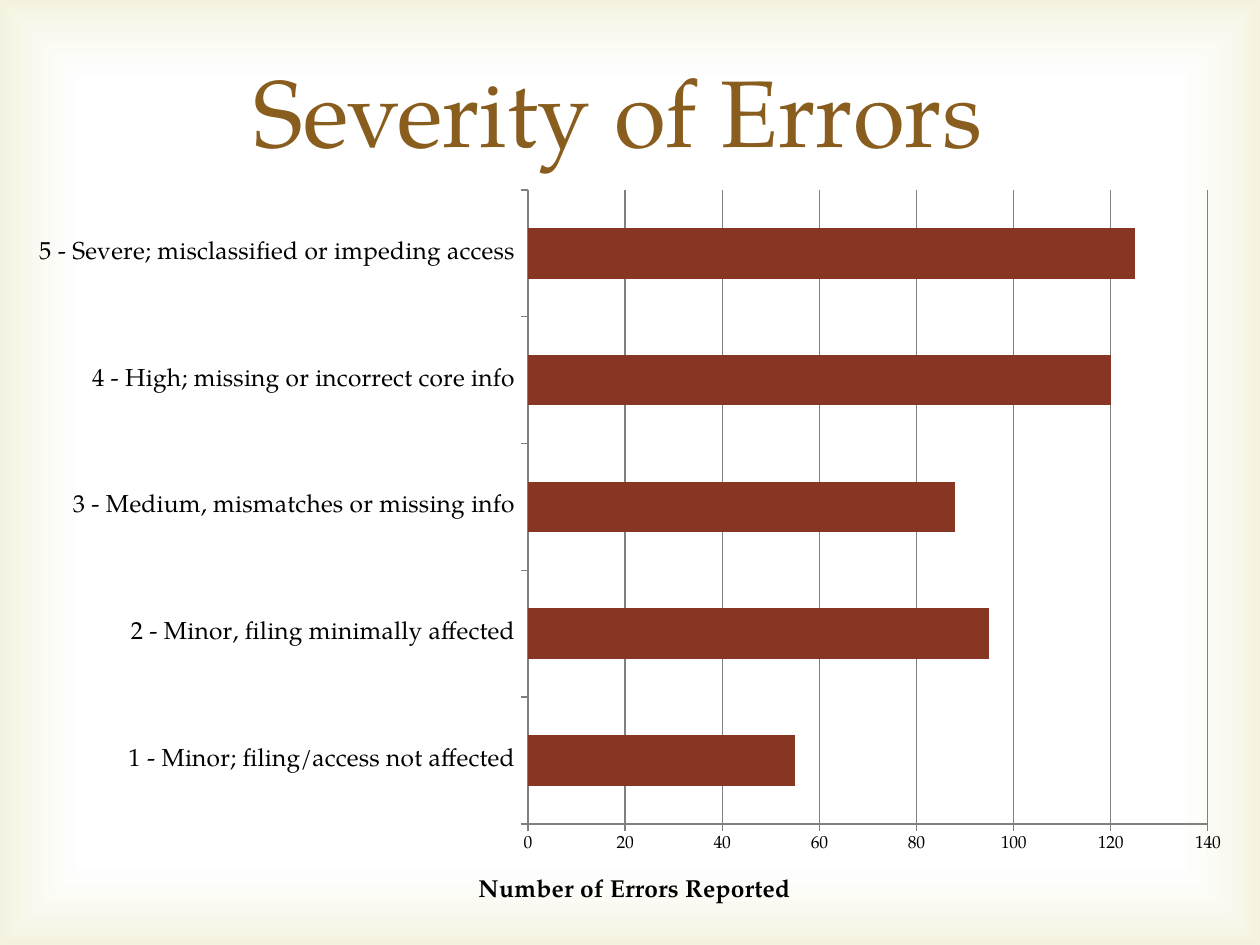
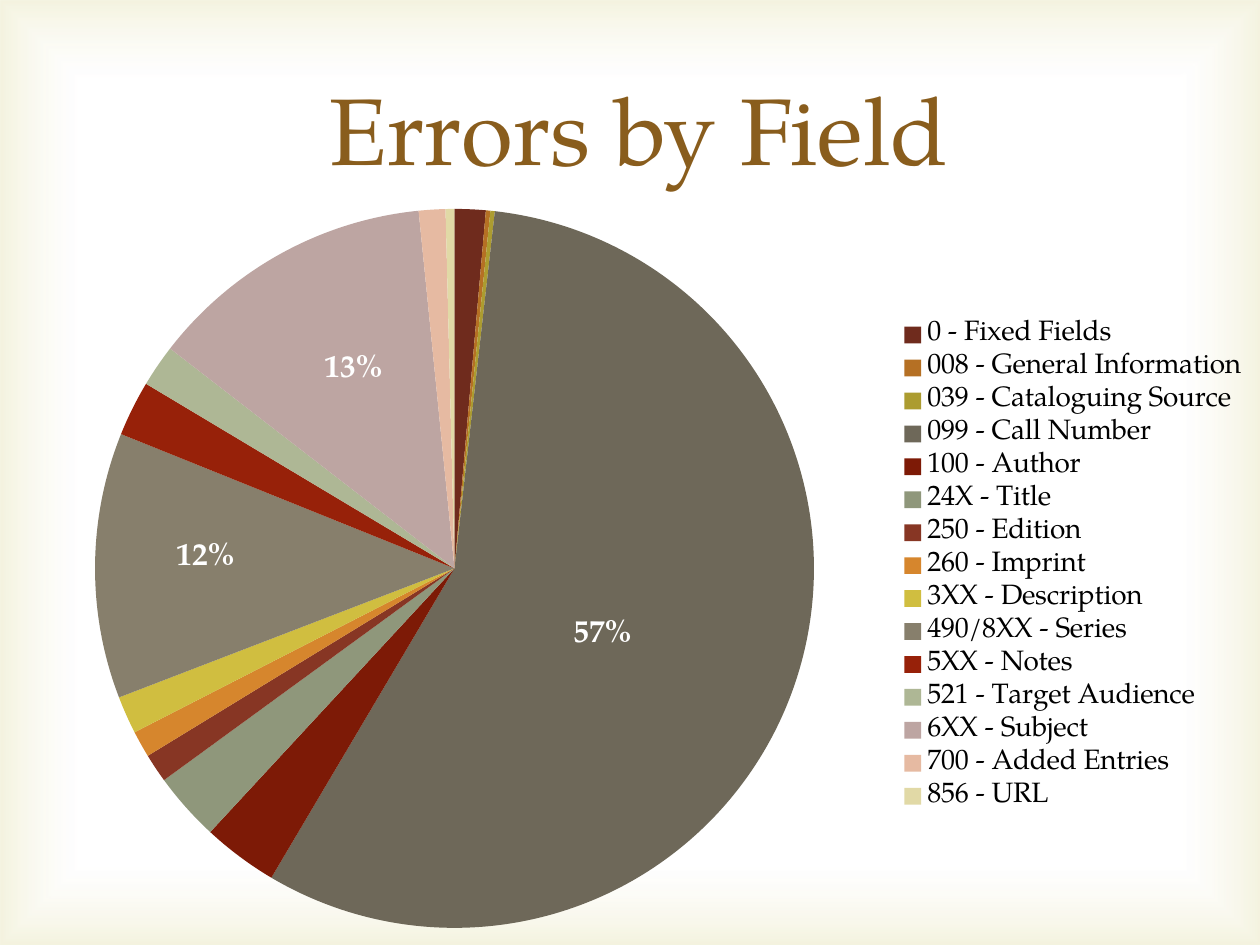
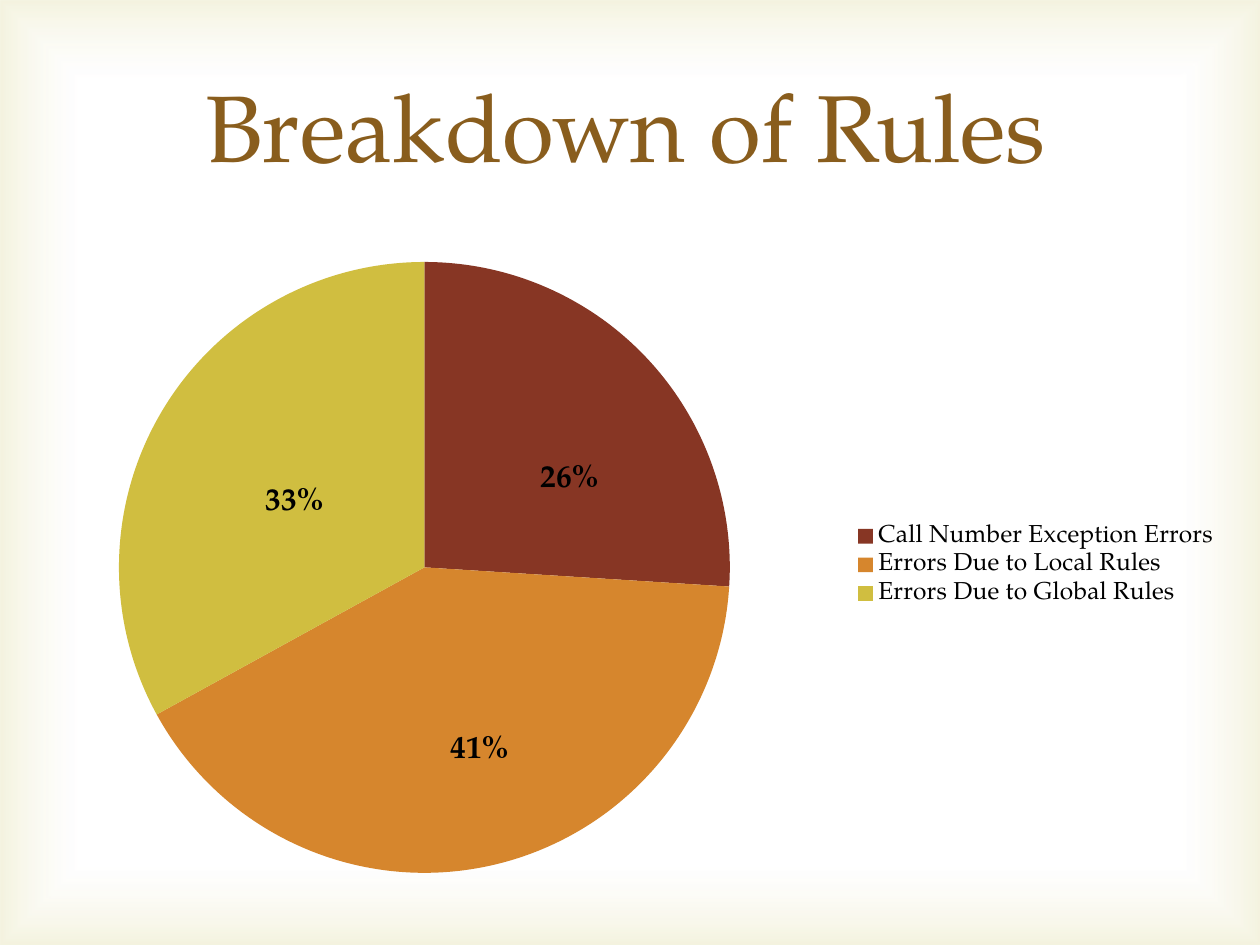
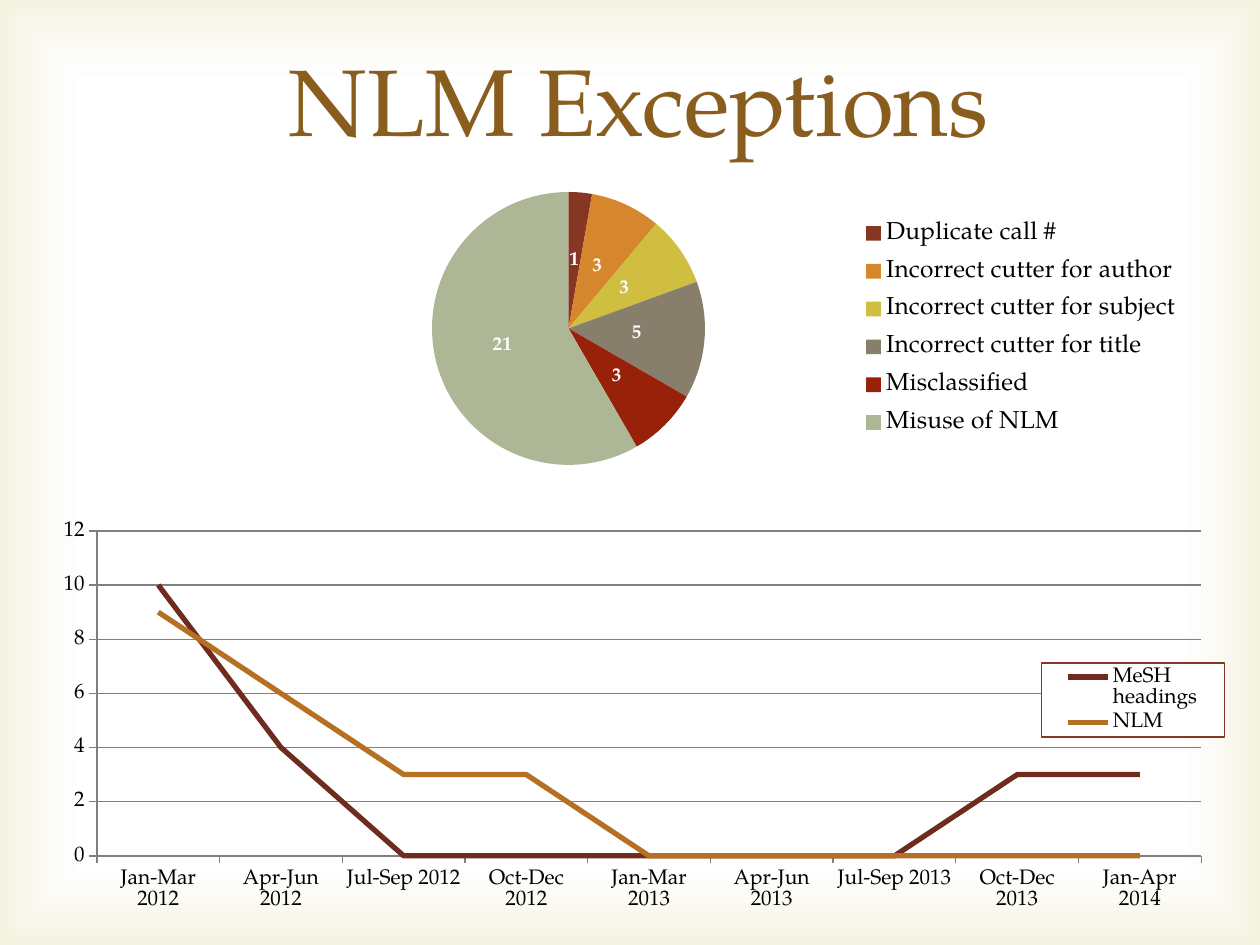
from lxml import etree
from pptx import Presentation
from pptx import util as u
from pptx.chart import data as chart_data
from pptx.dml.color import RGBColor
from pptx.enum import chart as kinds, shapes, text
from pptx.oxml import parse_xml
from pptx.oxml import ns

# ---- Shared style ----
PX = 914400 / 126
FONT = "TeX Gyre Pagella"
WIDTH, HEIGHT = 1260, 945
COLORS = {
    "title": "895D1D", "black": "000000", "white": "FFFFFF", "grid": "808080", "glow": "D1CA75",
    "brick": "873624", "orange": "D6862D", "gold": "D0BE40",
    "stone": "877F6C", "red": "972109", "sage": "AEB795",
    "dark brick": "6F2B1D", "dark orange": "B57024", "dark gold": "AC9C30",
    "dark stone": "6E6859", "dark red": "7D1A06", "dark sage": "8F977B",
    "light brick": "BDA5A2", "light orange": "E6BAA2", "light gold": "E1D9A6",
}
ACCENTS = ["brick", "orange", "gold", "stone", "red", "sage"]
FIELD_SHADES = ([f"dark {name}" for name in ACCENTS] + ACCENTS
                + [f"light {name}" for name in ACCENTS[:3]])

# ---- Content: boxes are left, top, width, height in px ----
SEVERITY = [
    ("1 - Minor; filing/access not affected", 55),
    ("2 - Minor, filing minimally affected", 95),
    ("3 - Medium, mismatches or missing info", 88),
    ("4 - High; missing or incorrect core info", 120),
    ("5 - Severe; misclassified or impeding access", 125),
]
FIELDS = [
    ("0 - Fixed Fields", 1.4), ("008 - General Information", 0.2),
    ("039 - Cataloguing Source", 0.2), ("099 - Call Number", 57),
    ("100 - Author", 3.4), ("24X - Title", 3.1), ("250 - Edition", 1.3),
    ("260 - Imprint", 1.2), ("3XX - Description", 1.7),
    ("490/8XX - Series", 12), ("5XX - Notes", 2.5),
    ("521 - Target Audience", 1.9), ("6XX - Subject", 13),
    ("700 - Added Entries", 1.2), ("856 - URL", 0.4),
]
RULES = [
    ("Call Number Exception Errors", 26),
    ("Errors Due to Local Rules", 41),
    ("Errors Due to Global Rules", 33),
]
EXCEPTIONS = [
    ("Duplicate call #", 1), ("Incorrect cutter for author", 3),
    ("Incorrect cutter for subject", 3), ("Incorrect cutter for title", 5),
    ("Misclassified", 3), ("Misuse of NLM", 21),
]
QUARTERS = ["Jan-Mar 2012", "Apr-Jun 2012", "Jul-Sep 2012", "Oct-Dec 2012", "Jan-Mar 2013",
            "Apr-Jun 2013", "Jul-Sep 2013", "Oct-Dec 2013", "Jan-Apr 2014"]
TRENDS = [
    ("MeSH headings", [10, 4, 0, 0, 0, 0, 0, 3, 3], "dark brick"),
    ("NLM", [9, 6, 3, 3, 0, 0, 0, 0, 0], "dark orange"),
]
TITLES = [
    ("Severity of Errors", (84, 37, 1068, 145)),
    ("Errors by Field", (105, 55, 1068, 145)),
    ("Breakdown of Rules", (35, 26, 1181, 198)),
    ("NLM Exceptions", (105, 26, 1068, 145)),
]
FIELD_SHARES = [("57%", 561, 605), ("12%", 164, 528), ("13%", 312, 340)]
RULE_SHARES = [("33%", 253, 473), ("26%", 528, 450), ("41%", 438, 721)]


# ---- Helpers ----
def emu(*lengths):
    return [u.Emu(round(length * PX)) for length in lengths]


def rgb(name):
    return RGBColor.from_string(COLORS[name])


def style(font, size, color="black", bold=False):
    font.name, font.size, font.bold = FONT, u.Pt(size), bold
    font.color.rgb = rgb(color)


def add_text(page, words, box, size, color, bold=False, title=False):
    frame = page.shapes.add_textbox(*emu(*box)).text_frame
    frame.word_wrap = title
    para = frame.paragraphs[0]
    if title:
        frame.vertical_anchor = text.MSO_ANCHOR.MIDDLE
        para.alignment = text.PP_ALIGN.CENTER
    span = para.add_run()
    span.text = words
    style(span.font, size, color, bold)


def add_shares(page, shares, color):
    for words, left, top in shares:
        add_text(page, words, (left, top, 86, 50), 18, color, bold=True)


def add_backdrop(deck, page):
    """Put the soft glowing edge on the master, behind every slide."""
    backdrop = page.shapes.add_shape(
        shapes.MSO_SHAPE.RECTANGLE, *emu(0, 0, WIDTH, HEIGHT))
    backdrop.shadow.inherit = False
    backdrop.line.fill.background()
    stops = "".join(
        f'<a:gs pos="{pos}000"><a:srgbClr val="{COLORS[color]}">'
        f'<a:alpha val="{alpha}000"/></a:srgbClr></a:gs>'
        for pos, color, alpha in [(83, "white", 11), (100, "glow", 23)])
    glow = parse_xml(
        f'<a:gradFill {ns.nsdecls("a")} rotWithShape="1"><a:gsLst>{stops}</a:gsLst>'
        '<a:path path="rect"><a:fillToRect l="50000" t="50000" r="50000" b="50000"/>'
        '</a:path></a:gradFill>')
    backdrop.element.spPr.find(ns.qn("a:prstGeom")).addnext(glow)
    deck.slide_master.shapes.element.insert(2, backdrop.element)


def place(owner, box, frame, index=1, inner=False):
    """Fix a chart part at a slide position inside its chart frame."""
    layout = owner.find(ns.qn("c:layout"))
    if layout is not None:
        owner.remove(layout)
    layout = parse_xml(f'<c:layout {ns.nsdecls("c")}><c:manualLayout/></c:layout>')
    owner.insert(index, layout)
    left, top, *size = box
    values = [("xMode", "edge"), ("yMode", "edge"),
              ("x", round((left - frame[0]) / frame[2], 4)),
              ("y", round((top - frame[1]) / frame[3], 4))]
    if inner:
        values.insert(0, ("layoutTarget", "inner"))
    values += [(key, round(part / whole, 4))
               for key, part, whole in zip("wh", size, frame[2:])]
    for key, value in values:
        etree.SubElement(layout[0], ns.qn(f"c:{key}")).set("val", str(value))


def add_chart(page, kind, categories, series, frame, plot):
    data = chart_data.CategoryChartData()
    data.categories = categories
    for name, values in series:
        data.add_series(name, values)
    chart = page.shapes.add_chart(kind, *emu(*frame), data).chart
    chart.has_title = chart.has_legend = False
    style(chart.font, 10)
    place(chart.element.xpath("c:chart/c:plotArea")[0], plot, frame, 0, inner=True)
    return chart


def add_legend(chart, size, box, frame, overlay=False):
    chart.has_legend = True
    legend = chart.legend
    legend.position = kinds.XL_LEGEND_POSITION.RIGHT
    legend.include_in_layout = overlay
    style(legend.font, size)
    element = chart.element.xpath("c:chart/c:legend")[0]
    place(element, box, frame)
    return element


def style_axes(chart, category_size, value_size, top, step):
    for axis, size in [(chart.category_axis, category_size), (chart.value_axis, value_size)]:
        axis.major_tick_mark = kinds.XL_TICK_MARK.OUTSIDE
        axis.minor_tick_mark = kinds.XL_TICK_MARK.NONE
        axis.format.line.color.rgb = rgb("grid")
        style(axis.tick_labels.font, size)
    axis = chart.value_axis
    axis.minimum_scale, axis.maximum_scale, axis.major_unit = 0, top, step
    axis.has_major_gridlines = True
    axis.major_gridlines.format.line.color.rgb = rgb("grid")


def add_pie(page, rows, frame, plot, shades, legend_size, legend_box):
    names, values = zip(*rows)
    chart = add_chart(page, kinds.XL_CHART_TYPE.PIE, names, [("Series 1", values)], frame, plot)
    add_legend(chart, legend_size, legend_box, frame)
    for index, shade in enumerate(shades[:len(rows)]):
        fill = chart.plots[0].series[0].points[index].format.fill
        fill.solid()
        fill.fore_color.rgb = rgb(shade)
    return chart


# ---- Slides ----
def fill_severity(page):
    frame = (15, 175, 1230, 753)
    names, values = zip(*SEVERITY)
    chart = add_chart(page, kinds.XL_CHART_TYPE.BAR_CLUSTERED, names,
                      [("Series 1", values)], frame, (528, 190, 680, 634))
    style_axes(chart, 14, 10, 140, 20)
    plot = chart.plots[0]
    plot.gap_width, plot.vary_by_categories = 150, False
    fill = plot.series[0].format.fill
    fill.solid()
    fill.fore_color.rgb = rgb("brick")
    title = chart.value_axis.axis_title
    span = title.text_frame.paragraphs[0].add_run()
    span.text = "Number of Errors Reported"
    style(span.font, 14, bold=True)
    place(title.element, (474, 872), frame)


def fill_fields(page):
    add_pie(page, FIELDS, (15, 192, 1245, 753), (95, 209, 719, 719),
            FIELD_SHADES, 16, (898, 316, 350, 500))
    add_shares(page, FIELD_SHARES, "white")


def fill_rules(page):
    add_pie(page, RULES, (0, 244, 1230, 645), (119, 262, 611, 611),
            ACCENTS, 14, (852, 520, 368, 90))
    add_shares(page, RULE_SHARES, "black")


def fill_exceptions(page):
    chart = add_pie(page, EXCEPTIONS, (213, 175, 1047, 307), (432, 192, 273, 273),
                    ACCENTS, 14, (841, 208, 360, 240))
    labels = chart.plots[0].series[0].data_labels
    labels.show_value = True
    labels.position = kinds.XL_LABEL_POSITION.CENTER
    style(labels.font, 11, "white", bold=True)

    frame = (39, 512, 1186, 407)
    chart = add_chart(page, kinds.XL_CHART_TYPE.LINE, QUARTERS,
                      [trend[:2] for trend in TRENDS], frame, (97, 531, 1105, 325))
    style_axes(chart, 12, 12, 12, 2)
    for series, (_, _, color) in zip(chart.plots[0].series, TRENDS):
        series.smooth = False
        series.marker.style = kinds.XL_MARKER_STYLE.NONE
        series.format.line.width = u.Pt(3)
        series.format.line.color.rgb = rgb(color)
    legend = add_legend(chart, 12, (1042, 663, 184, 74), frame, overlay=True)
    legend.find(ns.qn("c:txPr")).addprevious(parse_xml(
        f'<c:spPr {ns.nsdecls("c", "a")}>'
        f'<a:solidFill><a:srgbClr val="{COLORS["white"]}"/></a:solidFill>'
        f'<a:ln w="9525"><a:solidFill><a:srgbClr val="{COLORS["brick"]}"/>'
        '</a:solidFill></a:ln></c:spPr>'))


def main():
    deck = Presentation()
    deck.slide_width, deck.slide_height = emu(WIDTH, HEIGHT)
    fillers = [fill_severity, fill_fields, fill_rules, fill_exceptions]
    for number, ((title, box), fill_page) in enumerate(zip(TITLES, fillers)):
        page = deck.slides.add_slide(deck.slide_layouts[6])
        if number == 0:
            add_backdrop(deck, page)
        fill_page(page)
        add_text(page, title, box, 54, "title", title=True)
    deck.save("out.pptx")


if __name__ == "__main__":
    main()
